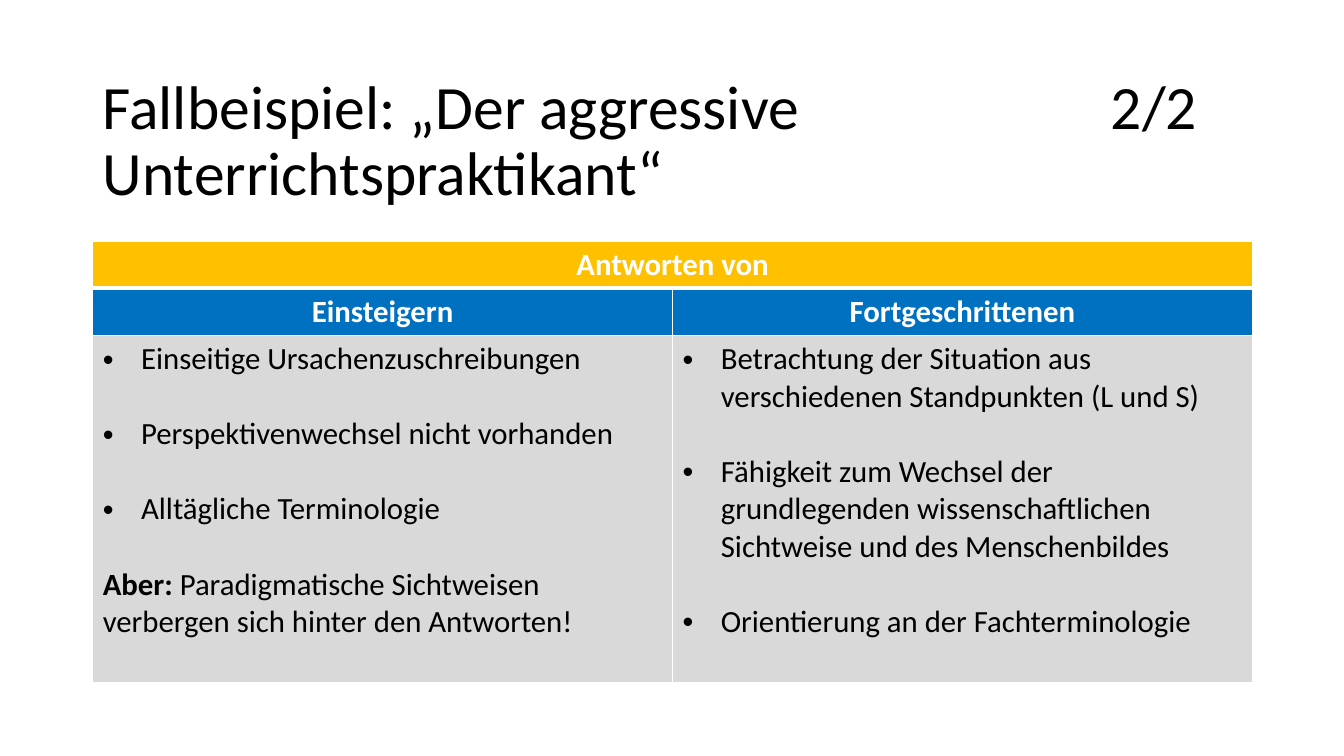
"""Build the slide comparing beginner and advanced answers to a case example."""
from pptx import Presentation
from pptx.dml.color import RGBColor
from pptx.enum.text import MSO_ANCHOR, PP_ALIGN
from pptx.oxml import parse_xml
from pptx.oxml.ns import nsdecls
from pptx.util import Inches, Pt

TITLE = "Fallbeispiel: „Der aggressive\t2/2 Unterrichtspraktikant“"
HEADING = "Antworten von"
ANSWERS = {
    "Einsteigern": {
        "bullets": ["Einseitige Ursachenzuschreibungen",
                    "Perspektivenwechsel nicht vorhanden",
                    "Alltägliche Terminologie"],
        "remark": ("Aber: ", "Paradigmatische Sichtweisen verbergen sich hinter den Antworten!"),
    },
    "Fortgeschrittenen": {
        "bullets": ["Betrachtung der Situation aus verschiedenen Standpunkten (L und S)",
                    "Fähigkeit zum Wechsel der grundlegenden wissenschaftlichen "
                    "Sichtweise und des Menschenbildes",
                    "Orientierung an der Fachterminologie"],
    },
}
BLACK, WHITE, GOLD, BLUE, GREY = "000000", "FFFFFF", "FFC000", "0070C0", "D9D9D9"
LEFT, WIDTH = 0.92, 11.5
ROW_HEIGHTS = (0.47, 0.47, 3.44)
LINE_GAP = 26.85


def rgb(color):
    return RGBColor.from_string(color)


def add_xml(parent, tag, attrs, inner=""):
    parent.append(parse_xml(f"<a:{tag} {nsdecls('a')} {attrs}>{inner}</a:{tag}>"))


def write(p, text, size=22, color=BLACK, bold=False, align=PP_ALIGN.LEFT, before=0):
    p.alignment = align
    p.space_before = Pt(before)
    r = p.add_run()
    r.text = text
    r.font.name, r.font.size, r.font.bold = "Calibri", Pt(size), bold
    r.font.color.rgb = rgb(color)


def style_cell(cell, fill, top=1, bottom=1):
    tcPr = cell._tc.get_or_add_tcPr()
    for side, width in zip("LRTB", (1, 1, top, bottom)):
        add_xml(tcPr, f"ln{side}", f'w="{Pt(width)}"',
                f'<a:solidFill><a:srgbClr val="{WHITE}"/></a:solidFill>')
    cell.fill.solid()
    cell.fill.fore_color.rgb = rgb(fill)


def write_header(cell, text):
    write(cell.text_frame.paragraphs[0], text, color=WHITE, bold=True, align=PP_ALIGN.CENTER)


def write_answers(tf, bullets, remark=()):
    for i, text in enumerate(bullets):
        p = tf.add_paragraph() if i else tf.paragraphs[0]
        write(p, text, before=LINE_GAP if i else 0)
        pPr = p._p.get_or_add_pPr()
        pPr.set("marL", str(Inches(0.38)))
        pPr.set("indent", str(-Inches(0.38)))
        add_xml(pPr, "buFont", 'typeface="Arial"')
        add_xml(pPr, "buChar", 'char="•"')
    if remark:
        p = tf.add_paragraph()
        for text, bold in zip(remark, (True, False)):
            write(p, text, bold=bold, before=LINE_GAP)


prs = Presentation()
prs.slide_width, prs.slide_height = Inches(13.33), Inches(7.5)
s = prs.slides.add_slide(prs.slide_layouts[6])

tf = s.shapes.add_textbox(Inches(LEFT), Inches(0.69), Inches(WIDTH), Inches(1.45)).text_frame
tf.word_wrap = True
tf.vertical_anchor = MSO_ANCHOR.MIDDLE
p = tf.paragraphs[0]
write(p, TITLE, size=44)
p.line_spacing = 0.9
add_xml(p._p.get_or_add_pPr(), "tabLst", "", f'<a:tab pos="{Inches(10)}" algn="l"/>')

table = s.shapes.add_table(len(ROW_HEIGHTS), len(ANSWERS), Inches(LEFT), Inches(2.39),
                           Inches(WIDTH), Inches(sum(ROW_HEIGHTS))).table
table.horz_banding = False
for row, height in zip(table.rows, ROW_HEIGHTS):
    row.height = Inches(height)
table.cell(0, 0).merge(table.cell(0, len(ANSWERS) - 1))
write_header(table.cell(0, 0), HEADING)
for col, (group, answers) in enumerate(ANSWERS.items()):
    table.columns[col].width = Inches(WIDTH / len(ANSWERS))
    style_cell(table.cell(0, col), GOLD, bottom=3)
    style_cell(table.cell(1, col), BLUE, top=3)
    style_cell(table.cell(2, col), GREY)
    write_header(table.cell(1, col), group)
    write_answers(table.cell(2, col).text_frame, **answers)

prs.save("out.pptx")
